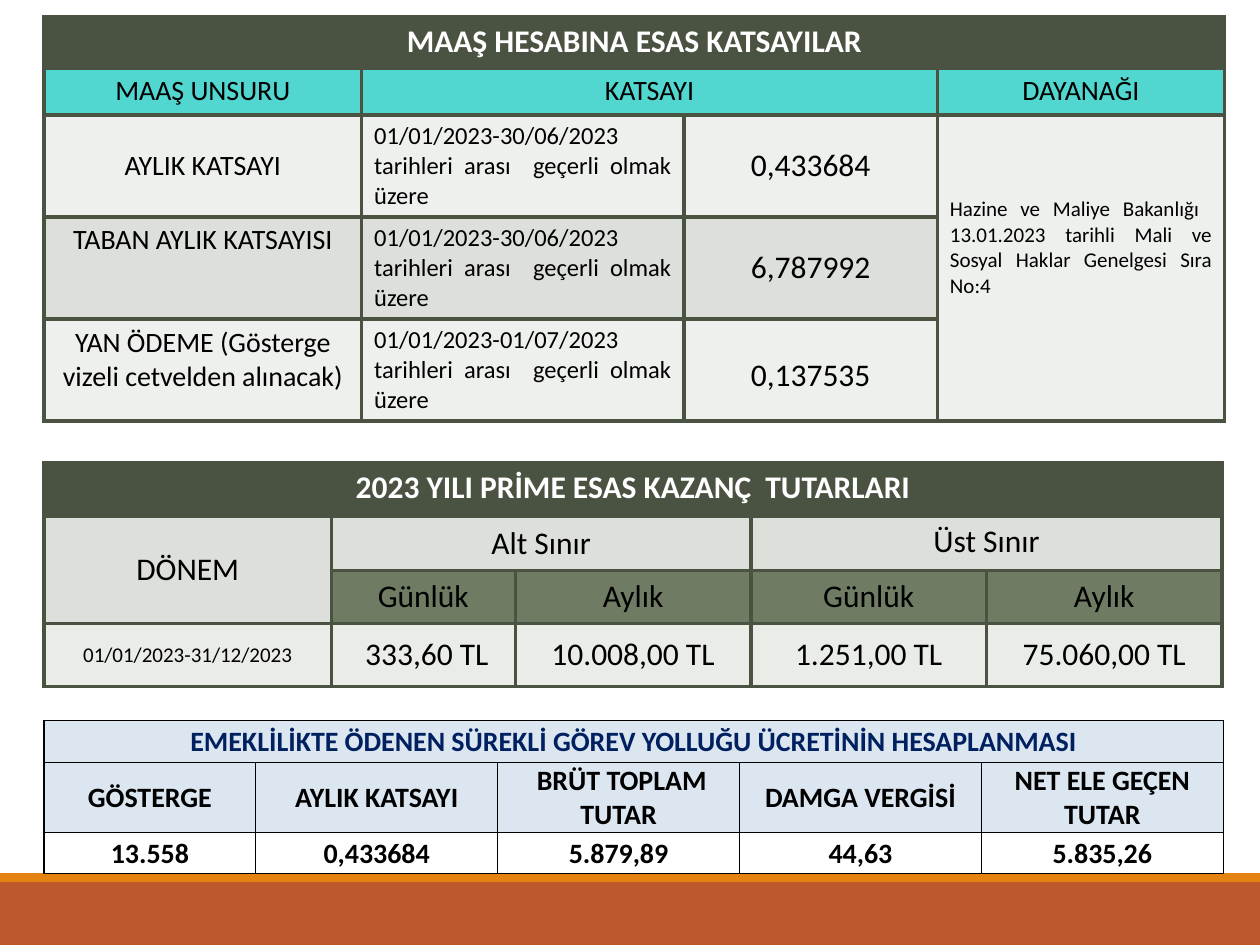
from lxml.etree import SubElement
from pptx import Presentation
from pptx.dml.color import RGBColor
from pptx.enum.shapes import MSO_SHAPE
from pptx.enum.text import MSO_ANCHOR, PP_ALIGN
from pptx.oxml.ns import qn
from pptx.util import Inches, Pt

COLORS = {
    "rust": "BD582C", "orange": "E48312", "olive": "4A5242", "turquoise": "52D6D0",
    "pale": "EEF0ED", "sage": "DCDFDA", "moss": "6F7B63", "mist": "EAECE7",
    "ice": "DCE6F1", "navy": "002060", "black": "000000", "white": "FFFFFF",
}
SLIDE_WIDTH, SLIDE_HEIGHT = 10, 7.5
TABLE_LEFT = 0.35
FOOTER_BARS = [("rust", 7, 0.5), ("orange", 6.93, 0.07)]

FIRST_HALF = "01/01/2023-30/06/2023 tarihleri arası  geçerli olmak üzere"
SIDE_PAYMENT = "01/01/2023-01/07/2023 tarihleri arası  geçerli olmak üzere"
BASIS = "Hazine ve Maliye Bakanlığı  13.01.2023 tarihli Mali ve Sosyal Haklar Genelgesi Sıra No:4"

TITLE = dict(fill="olive", color="white", bold=True, size=18)
PERIOD = dict(size=14, align=PP_ALIGN.JUSTIFY)
TOP = dict(anchor=MSO_ANCHOR.TOP)
ICE_HEADER = dict(fill="ice", bold=True)

TABLES = [
    dict(
        top=0.13, columns=[2.52, 2.56, 2.01, 2.28], heights=[0.41, 0.36, 0.8, 0.8, 0.8],
        border="olive", inner=2.25, outer=2.25, base=dict(size=16),
        rows=[
            ["MAAŞ HESABINA ESAS KATSAYILAR", None, None, None],
            ["MAAŞ UNSURU", "KATSAYI", None, "DAYANAĞI"],
            ["AYLIK KATSAYI", FIRST_HALF, "0,433684", BASIS],
            ["TABAN AYLIK KATSAYISI", FIRST_HALF, "6,787992", None],
            ["YAN ÖDEME (Gösterge vizeli cetvelden alınacak)", SIDE_PAYMENT, "0,137535", None],
        ],
        spans={(0, 0): (1, 4), (1, 1): (1, 2), (2, 3): (3, 1)},
        row_formats=[TITLE | TOP, dict(fill="turquoise") | TOP, dict(fill="pale"),
                     dict(fill="sage"), dict(fill="pale")],
        cell_formats={
            (2, 1): PERIOD, (3, 1): PERIOD, (4, 1): PERIOD,
            (2, 2): dict(size=18), (3, 2): dict(size=18),
            (4, 2): dict(size=18, margins=(0, 0.3, 0, 0)) | TOP,
            (2, 3): dict(size=12, align=PP_ALIGN.JUSTIFY, margins=(0.1, 0.65, 0.1, 0.05)) | TOP,
            (3, 0): TOP, (4, 0): TOP,
        },
    ),
    dict(
        top=3.67, columns=[2.28, 1.46, 1.87, 1.87, 1.87], heights=[0.43, 0.43, 0.42, 0.5],
        border="olive", inner=2.25, outer=2.25, base=dict(size=18),
        rows=[
            ["2023 YILI PRİME ESAS KAZANÇ  TUTARLARI", None, None, None, None],
            ["DÖNEM", "Alt Sınır", None, "Üst Sınır", None],
            [None, "Günlük", "Aylık", "Günlük", "Aylık"],
            ["01/01/2023-31/12/2023", " 333,60 TL", "10.008,00 TL", "1.251,00 TL", "75.060,00 TL"],
        ],
        spans={(0, 0): (1, 5), (1, 0): (2, 1), (1, 1): (1, 2), (1, 3): (1, 2)},
        row_formats=[TITLE | TOP, dict(fill="sage"), dict(fill="moss") | TOP, dict(fill="mist")],
        cell_formats={(1, 3): TOP, (3, 0): dict(size=12)},
    ),
    dict(
        top=5.72, columns=[1.68, 1.92, 1.92, 1.92, 1.92], heights=[0.33, 0.54, 0.33],
        border="black", inner=0.5, outer=1, base=dict(size=16, margins=(0.01, 0.01, 0.01, 0)),
        rows=[
            ["EMEKLİLİKTE ÖDENEN SÜREKLİ GÖREV YOLLUĞU ÜCRETİNİN HESAPLANMASI", None, None, None, None],
            ["GÖSTERGE", "AYLIK KATSAYI", " BRÜT TOPLAM TUTAR", "DAMGA VERGİSİ", "NET ELE GEÇEN TUTAR"],
            ["13.558", "0,433684", "5.879,89", "44,63", "5.835,26"],
        ],
        spans={(0, 0): (1, 5)},
        row_formats=[ICE_HEADER | dict(color="navy"), ICE_HEADER, dict(bold=True)],
        cell_formats={},
    ),
]


def rgb(name):
    return RGBColor.from_string(COLORS[name])


def write(cell, text, *, size, color="black", bold=False, fill=None, align=PP_ALIGN.CENTER,
          anchor=MSO_ANCHOR.MIDDLE, margins=(0.1, 0.05, 0.1, 0.05)):
    cell.vertical_anchor = anchor
    cell.margin_left, cell.margin_top, cell.margin_right, cell.margin_bottom = map(Inches, margins)
    if fill:
        cell.fill.solid()
        cell.fill.fore_color.rgb = rgb(fill)
    else:
        cell.fill.background()
    paragraph = cell.text_frame.paragraphs[0]
    paragraph.alignment = align
    run = paragraph.add_run()
    run.text = text
    run.font.name = "Calibri"
    run.font.size = Pt(size)
    run.font.bold = bold
    run.font.color.rgb = rgb(color)


def draw_borders(cell, color, widths):
    properties = cell._tc.get_or_add_tcPr()
    for side, width in widths.items():
        line = SubElement(properties, qn(f"a:ln{side}"), w=str(Pt(width)))
        SubElement(SubElement(line, qn("a:solidFill")), qn("a:srgbClr"), val=COLORS[color])


def build_table(slide, content):
    columns, heights, rows = content["columns"], content["heights"], content["rows"]
    inner, outer = content["inner"], content["outer"]
    last_row, last_column = len(heights) - 1, len(columns) - 1
    table = slide.shapes.add_table(
        len(heights), len(columns), Inches(TABLE_LEFT), Inches(content["top"]),
        Inches(sum(columns)), Inches(sum(heights))).table
    table.horz_banding = False
    for column, width in zip(table.columns, columns):
        column.width = Inches(width)
    for row, height in zip(table.rows, heights):
        row.height = Inches(height)
    for (r, c), (deep, wide) in content["spans"].items():
        table.cell(r, c).merge(table.cell(r + deep - 1, c + wide - 1))
    for r, texts in enumerate(rows):
        for c, text in enumerate(texts):
            cell = table.cell(r, c)
            deep, wide = content["spans"].get((r, c), (1, 1))
            draw_borders(cell, content["border"], {
                "L": outer if c == 0 else inner,
                "R": outer if c + wide - 1 == last_column else inner,
                "T": inner,
                "B": outer if r + deep - 1 == last_row else inner,
            })
            if text is not None:
                write(cell, text, **(content["base"] | content["row_formats"][r]
                                     | content["cell_formats"].get((r, c), {})))


def main():
    deck = Presentation()
    deck.slide_width, deck.slide_height = Inches(SLIDE_WIDTH), Inches(SLIDE_HEIGHT)
    slide = deck.slides.add_slide(deck.slide_layouts[6])
    for color, top, height in FOOTER_BARS:
        bar = slide.shapes.add_shape(
            MSO_SHAPE.RECTANGLE, 0, Inches(top), deck.slide_width, Inches(height))
        bar.shadow.inherit = False
        bar.fill.solid()
        bar.fill.fore_color.rgb = rgb(color)
        bar.line.fill.background()
    for content in TABLES:
        build_table(slide, content)
    deck.save("out.pptx")


if __name__ == "__main__":
    main()
